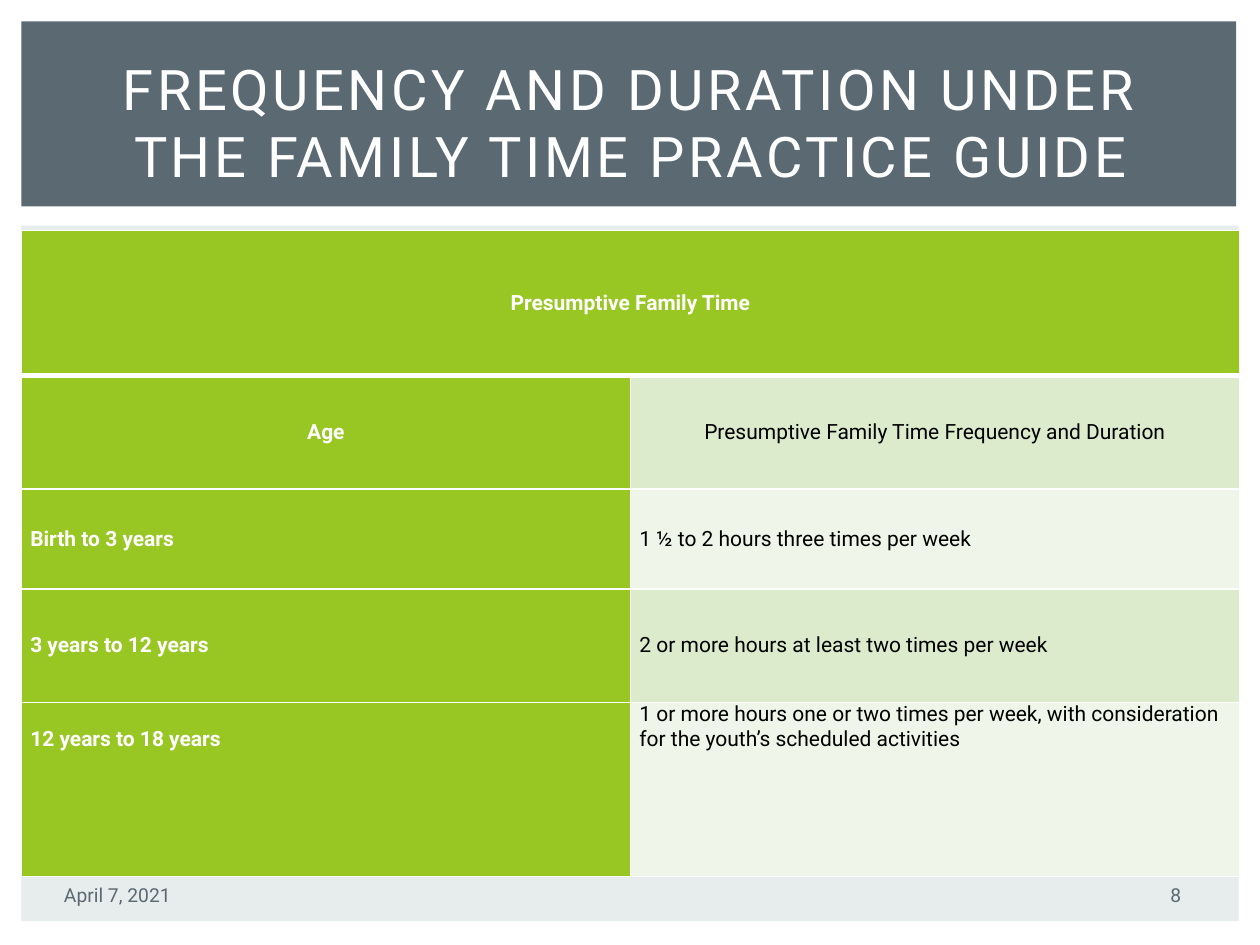
from lxml import etree
from pptx import Presentation
from pptx.dml.color import RGBColor
from pptx.enum.shapes import MSO_SHAPE
from pptx.enum.text import MSO_ANCHOR, MSO_AUTO_SIZE, PP_ALIGN
from pptx.oxml.ns import qn
from pptx.util import Cm, Pt

RECT = MSO_SHAPE.RECTANGLE
MIDDLE, TOP = MSO_ANCHOR.MIDDLE, MSO_ANCHOR.TOP
LEFT, CENTER = PP_ALIGN.LEFT, PP_ALIGN.CENTER
FIXED = MSO_AUTO_SIZE.NONE

WHITE, BLACK, SLATE, MIST = "FFFFFF", "000000", "5B6973", "E7ECED"
GREEN, SAGE, PALE = "98C723", "DDEBCD", "EFF5E8"

HEAD = {"size": Pt(32), "name": "Roboto", "bold": False}
BODY = {"size": Pt(12), "name": "Roboto", "bold": False}
BOLD = {**BODY, "bold": True}
NOTE = {**BODY, "size": Pt(11)}

ROWS = [
    ("Presumptive Family Time", ""),
    ("Age", "Presumptive Family Time Frequency and Duration"),
    ("Birth to 3 years", "1 ½ to 2 hours three times per week"),
    ("3 years to 12 years", "2 or more hours at least two times per week"),
    ("12 years to 18 years", "1 or more hours one or two times per week, "
     "with consideration for the youth’s scheduled activities"),
]
TALL = [2.92, 2.29, 2.01, 2.29, 3.51]


def paint(fill, color):
    fill.solid()
    fill.fore_color.rgb = RGBColor.from_string(color)


def apply(target, values):
    for key, value in values.items():
        setattr(target, key, value)


def write(frame, text, form, color, align):
    frame.text = text
    para = frame.paragraphs[0]
    para.alignment = align
    for run in para.runs:
        apply(run.font, form)
        paint(run.font.fill, color)


def panel(slide, box, color):
    shape = slide.shapes.add_shape(RECT, *map(Cm, box))
    shape.shadow.inherit = False
    paint(shape.fill, color)
    shape.line.fill.background()


def header(slide, box):
    left, top, width, height = box
    panel(slide, box, SLATE)
    title = slide.shapes.title
    slide.shapes._spTree.append(title._element)
    apply(title, {"left": Cm(left + 0.64), "top": Cm(top + 0.56),
                  "width": Cm(width - 1.2), "height": Cm(height - 0.81)})
    frame = title.text_frame
    apply(frame, {"auto_size": FIXED, "word_wrap": True,
                  "vertical_anchor": MIDDLE})
    write(frame, "FREQUENCY AND DURATION UNDER\vTHE FAMILY TIME PRACTICE GUIDE",
          HEAD, WHITE, CENTER)
    for run in frame.paragraphs[0].runs:
        run.font._element.set("spc", "200")


def border(cell, widths):
    props = cell._tc.get_or_add_tcPr()
    for side, width in zip("LRTB", widths):
        line = etree.SubElement(props, qn(f"a:ln{side}"), w=str(Pt(width)))
        fill = etree.SubElement(line, qn("a:solidFill"))
        etree.SubElement(fill, qn("a:srgbClr"), val=WHITE)


def chart(slide, box):
    left, top, width = box
    size = (left, top, width, sum(TALL))
    table = slide.shapes.add_table(len(ROWS), 2, *map(Cm, size)).table
    apply(table, {"first_row": False, "horz_banding": False})
    for col in table.columns:
        col.width = Cm(width / 2)
    last = len(ROWS) - 1
    for r, texts in enumerate(ROWS):
        table.rows[r].height = Cm(TALL[r])
        for c, text in enumerate(texts):
            cell = table.cell(r, c)
            label = c == 0 or r == 0
            border(cell, (1, 1, 3 if r == 1 else 1, 3 if r == 0 else 1))
            paint(cell.fill, GREEN if label else SAGE if r % 2 else PALE)
            drop = 0.5 if r == last and label else 0
            apply(cell, {"margin_left": Cm(0.18), "margin_right": Cm(0.18),
                         "margin_top": Cm(drop), "margin_bottom": 0,
                         "vertical_anchor": TOP if r == last else MIDDLE})
            write(cell.text_frame, text, BOLD if label else BODY,
                  WHITE if label else BLACK, CENTER if r < 2 else LEFT)
    table.cell(0, 0).merge(table.cell(0, 1))


def footer(slide, box):
    left, top, width, height = box
    parts = [("April 7, 2021", 0, 5.92, LEFT),
             ("8", width - 1.63, 1.63, CENTER)]
    for text, shift, wide, align in parts:
        size = (left + shift, top, wide, height)
        frame = slide.shapes.add_textbox(*map(Cm, size)).text_frame
        apply(frame, {"word_wrap": True, "vertical_anchor": MIDDLE})
        write(frame, text, NOTE, SLATE, align)


def main():
    deck = Presentation()
    apply(deck, {"slide_width": Cm(25.4), "slide_height": Cm(19.05)})
    slide = deck.slides.add_slide(deck.slide_layouts[5])
    panel(slide, (0.43, 4.55, 24.54, 14.02), MIST)
    header(slide, (0.43, 0.43, 24.49, 3.73))
    chart(slide, (0.43, 4.65, 24.56))
    footer(slide, (1.04, 17.65, 23.48, 0.76))
    deck.save("out.pptx")


if __name__ == "__main__":
    main()
